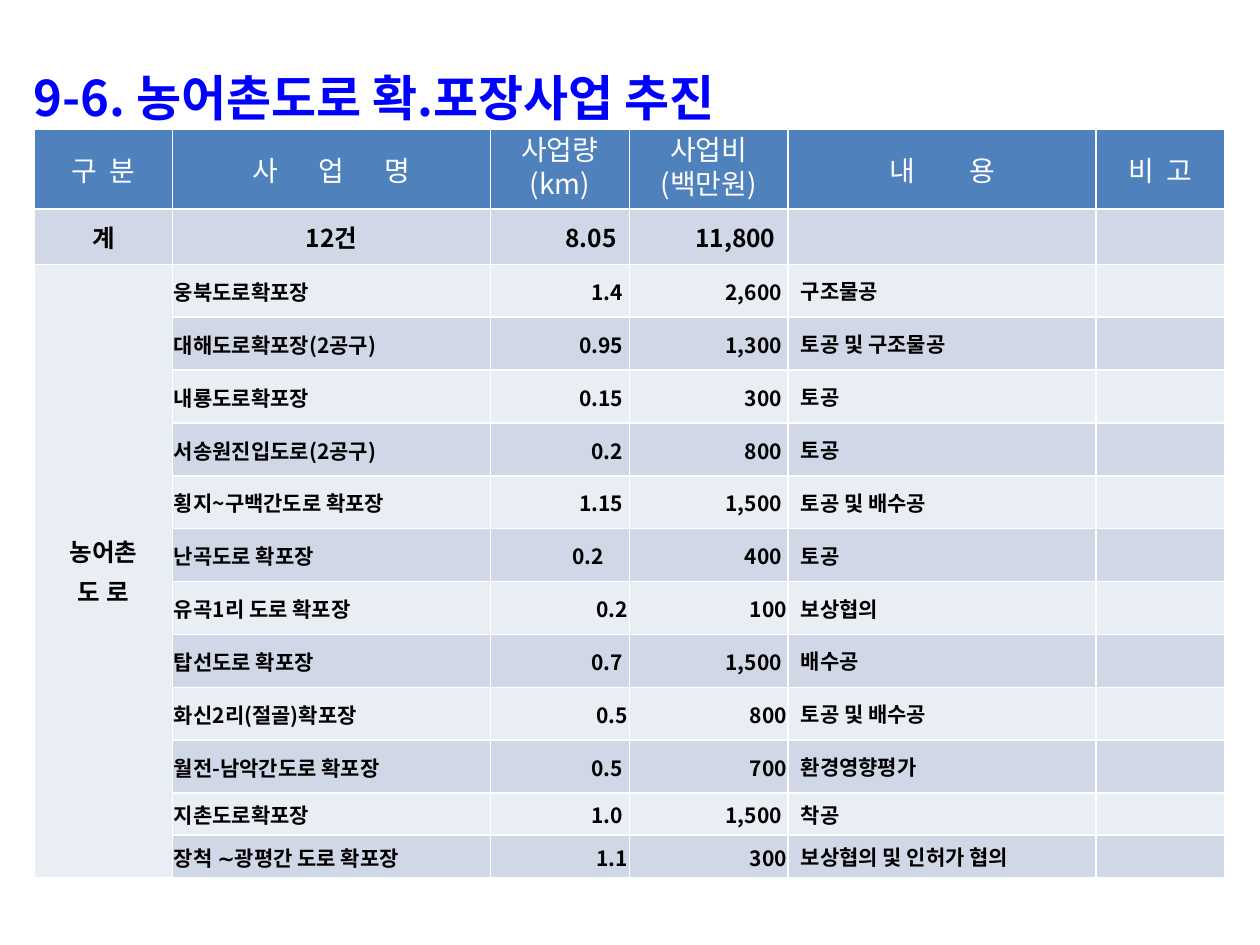
from collections import namedtuple

from lxml import etree
from pptx import Presentation
from pptx import util as u
from pptx.dml.color import RGBColor
from pptx.enum import text
from pptx.oxml.ns import qn

Box = namedtuple("Box", "left top width height")
FONT = "Noto Sans CJK KR"
COLORS = {
    "title": "0000FF", "header": "4F81BD", "dark": "D0D8E8",
    "light": "E9EDF4", "white": "FFFFFF", "black": "000000",
}
LEFT, CENTER, RIGHT = text.PP_ALIGN.LEFT, text.PP_ALIGN.CENTER, text.PP_ALIGN.RIGHT
WIDE = (0.1, 0.05, 0.1, 0.05)
COLUMNS = [1.1, 2.52, 1.1, 1.26, 2.44, 1.02]
ROWS = [0.63, 0.44] + [0.42] * 10 + [0.335] * 2
HEADERS = [
    ("구 분", 1.8, 1), ("사 업 명", 9.7, 1), ("사업량\n(km)", 0, 0.7),
    ("사업비\n(백만원)", 0, 0.7), ("내 용", 13.7, 1), ("비 고", 1.8, 1),
]
TOTALS = [("계", CENTER), ("12건", CENTER), ("8.05", RIGHT), ("11,800", RIGHT), ("", LEFT), ("", LEFT)]
FLUSH, NEAR, FAR = 0.01, 0.05, 0.2
PROJECTS = [
    ("웅북도로확포장", "1.4", NEAR, "2,600", NEAR, "구조물공"),
    ("대해도로확포장(2공구)", "0.95", NEAR, "1,300", NEAR, "토공 및 구조물공"),
    ("내룡도로확포장", "0.15", NEAR, "300", NEAR, "토공"),
    ("서송원진입도로(2공구)", "0.2", NEAR, "800", NEAR, "토공"),
    ("횡지~구백간도로 확포장", "1.15", NEAR, "1,500", NEAR, "토공 및 배수공"),
    ("난곡도로 확포장", "0.2", FAR, "400", NEAR, "토공"),
    ("유곡1리 도로 확포장", "0.2", FLUSH, "100", FLUSH, "보상협의"),
    ("탑선도로 확포장", "0.7", NEAR, "1,500", NEAR, "배수공"),
    ("화신2리(절골)확포장", "0.5", FLUSH, "800", FLUSH, "토공 및 배수공"),
    ("월전-남악간도로 확포장", "0.5", NEAR, "700", FLUSH, "환경영향평가"),
    ("지촌도로확포장", "1.0", NEAR, "1,500", NEAR, "착공"),
    ("장척 ∼광평간 도로 확포장", "1.1", FLUSH, "300", FLUSH, "보상협의 및 인허가 협의"),
]


def add_span(para, words, size, color, bold, tracking=0):
    """Add one formatted run, with optional letter spacing in points."""
    span = para.add_run()
    span.text = words
    span.font.size = u.Pt(size)
    span.font.bold = bold
    span.font.name = FONT
    span.font.color.rgb = RGBColor.from_string(COLORS[color])
    properties = span._r.get_or_add_rPr()
    etree.SubElement(properties, qn("a:ea"), typeface=FONT)
    if tracking:
        properties.set("spc", str(round(tracking * 100)))


def write(frame, words, size=12, color="black", bold=True, align=LEFT, spacing=1, tracking=0):
    """Fill a text frame, one paragraph for each line of words."""
    for index, line in enumerate(words.split("\n")):
        para = frame.add_paragraph() if index else frame.paragraphs[0]
        para.alignment = align
        para.line_spacing = spacing
        if index:
            para.space_before = u.Pt(size * 0.2)
        if not line:
            etree.SubElement(para._p, qn("a:endParaRPr"), sz=str(size * 100))
        elif tracking:
            add_span(para, line[:-1], size, color, bold, tracking)
            add_span(para, line[-1], size, color, bold)
        else:
            add_span(para, line, size, color, bold)


def draw_borders(cell):
    """Give a cell thin white lines on its four sides."""
    properties = cell._tc.get_or_add_tcPr()
    for index, side in enumerate(("lnL", "lnR", "lnT", "lnB")):
        line = etree.Element(qn(f"a:{side}"), w=str(u.Pt(1)))
        fill = etree.SubElement(line, qn("a:solidFill"))
        etree.SubElement(fill, qn("a:srgbClr"), val=COLORS["white"])
        properties.insert(index, line)


def fill_cell(cell, words, fill, margins=WIDE, **style):
    """Set the background, borders, margins and text of a table cell."""
    cell.fill.solid()
    cell.fill.fore_color.rgb = RGBColor.from_string(COLORS[fill])
    draw_borders(cell)
    cell.vertical_anchor = text.MSO_ANCHOR.MIDDLE
    cell.margin_left, cell.margin_top, cell.margin_right, cell.margin_bottom = map(u.Inches, margins)
    write(cell.text_frame, words, **style)


def add_title(page, box):
    """Place the slide heading in its box."""
    frame = page.shapes.add_textbox(*box).text_frame
    frame.word_wrap = True
    write(frame, "9-6. 농어촌도로 확.포장사업 추진", size=28, color="title", spacing=1.2)


def add_project_row(table, row, project):
    """Write one road project across the table."""
    name, length, length_gap, cost, cost_gap, work = project
    fill = "dark" if row % 2 else "light"
    group = "농어촌\n도 로" if row == 2 else ""
    fill_cell(table.cell(row, 0), group, "light", size=14, align=CENTER)
    fill_cell(table.cell(row, 1), name, fill, (FLUSH, 0.01, FLUSH, 0))
    for column, value, gap in ((2, length, length_gap), (3, cost, cost_gap)):
        fill_cell(table.cell(row, column), value, fill, (FLUSH, 0.01, gap, 0), align=RIGHT)
    fill_cell(table.cell(row, 4), work, fill)
    fill_cell(table.cell(row, 5), "", fill)


def add_project_table(page, box):
    """Place the table of road projects in its box."""
    table = page.shapes.add_table(len(ROWS), len(COLUMNS), *box).table
    for column, share in zip(table.columns, COLUMNS):
        column.width = round(box.width * share / sum(COLUMNS))
    for row, share in zip(table.rows, ROWS):
        row.height = round(box.height * share / sum(ROWS))
    for column, (words, tracking, spacing) in enumerate(HEADERS):
        fill_cell(table.cell(0, column), words, "header", size=16, color="white", bold=False,
                  align=CENTER, spacing=spacing, tracking=tracking)
    for column, (words, align) in enumerate(TOTALS):
        fill_cell(table.cell(1, column), words, "dark", size=14, align=align)
    for row, project in enumerate(PROJECTS, start=2):
        add_project_row(table, row, project)
    table.cell(2, 0).merge(table.cell(len(ROWS) - 1, 0))


def main():
    """Build the slide and save the deck."""
    deck = Presentation()
    deck.slide_width, deck.slide_height = u.Inches(10), u.Inches(7.5)
    page = deck.slides.add_slide(deck.slide_layouts[6])

    def share(left, top, width, height):
        """Turn percentages of the slide into a box."""
        return Box(*(round(part * side / 100) for part, side in zip(
            (left, top, width, height), (deck.slide_width, deck.slide_height) * 2)))

    add_title(page, share(1.7, 5.2, 97.6, 41.6))
    add_project_table(page, share(2.7, 13.7, 94.5, 79.2))
    deck.save("out.pptx")


if __name__ == "__main__":
    main()
